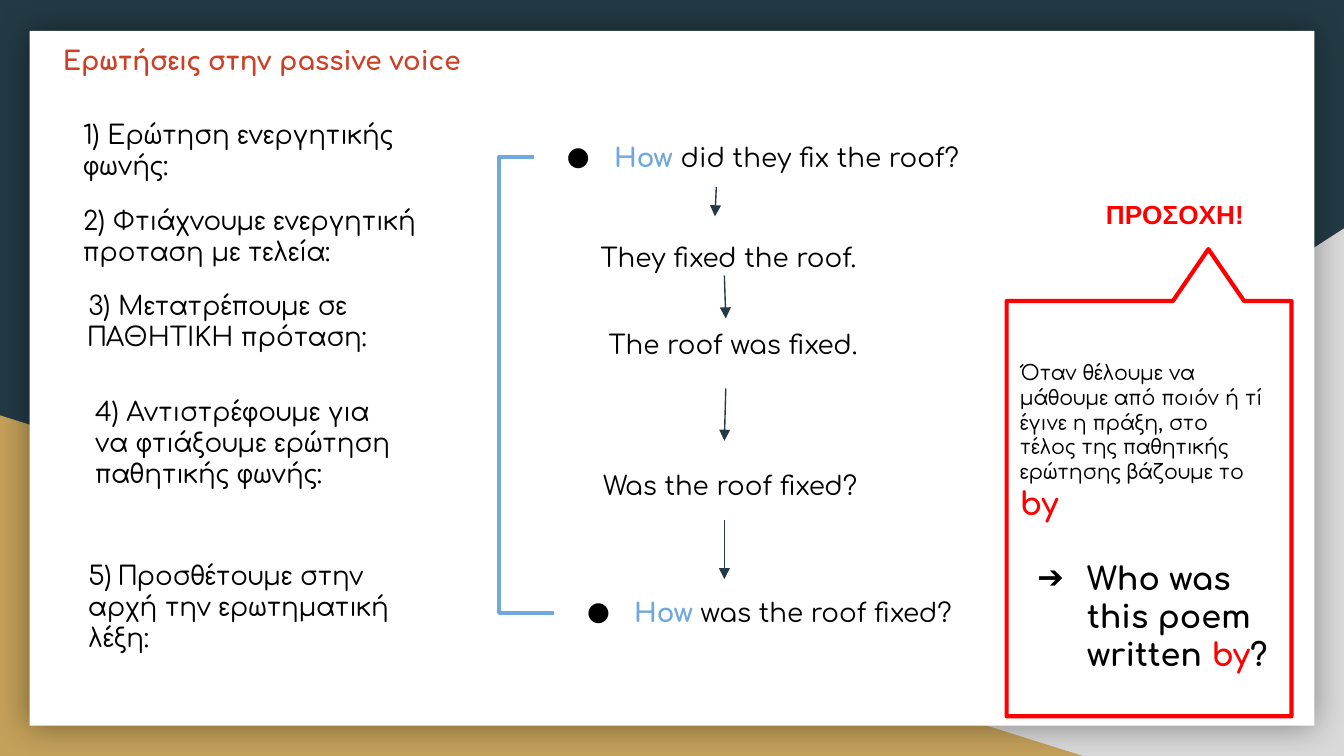
from lxml import etree
from pptx import Presentation
from pptx.dml.color import RGBColor
from pptx.enum.shapes import MSO_CONNECTOR, MSO_SHAPE
from pptx.enum.text import MSO_ANCHOR
from pptx.oxml.ns import qn
from pptx.util import Inches, Pt

STRAIGHT, ELBOW = MSO_CONNECTOR.STRAIGHT, MSO_CONNECTOR.ELBOW
RECTANGLE, TRIANGLE = MSO_SHAPE.RECTANGLE, MSO_SHAPE.RIGHT_TRIANGLE
CALLOUT = MSO_SHAPE.RECTANGULAR_CALLOUT

NAVY = RGBColor(0x23, 0x3A, 0x44)
GREY = RGBColor(0xD9, 0xD9, 0xD9)
GOLD = RGBColor(0xC4, 0xA1, 0x5A)
WHITE = RGBColor(0xFF, 0xFF, 0xFF)
BLACK = RGBColor(0, 0, 0)
RUST = RGBColor(0xCC, 0x41, 0x25)
BLUE = RGBColor(0x6F, 0xA8, 0xDC)
RED = RGBColor(0xFF, 0, 0)

# The slide is a grid of 100 columns by 56.25 rows of square cells
COLUMNS, ROWS = 100, 56.25
CELL = Inches(0.1)
LINE = 4.4  # height of a one-line text box, in rows
BODY = "Comfortaa"

# Column, row, width, height, wording
STEPS = [
    (5.2, 7.8, 25.7, 6.7, "1) Ερώτηση ενεργητικής φωνής:"),
    (5.2, 14.2, 31.2, 6.7, "2) Φτιάχνουμε ενεργητική προταση με τελεία:"),
    (5.6, 20.5, 27.4, 6.7, "3) Μετατρέπουμε σε ΠΑΘΗΤΙΚΗ πρόταση:"),
    (6.1, 28.4, 24.8, 11.4, "4) Αντιστρέφουμε για να φτιάξουμε ερώτηση παθητικής φωνής:"),
    (5.6, 40.6, 24.8, 9.1, "5) Προσθέτουμε στην αρχή την ερωτηματική λέξη:"),
]
# Column, row, width, wording
QUESTIONS = [
    (39.7, 9.5, 34.2, "did they fix the roof?"),
    (41.2, 43.4, 31.8, "was the roof fixed?"),
]
SENTENCES = [
    (43.7, 17, 28.9, "They fixed the roof."),
    (44.3, 23.4, 28.2, "The roof was fixed."),
    (43.9, 33.9, 27.4, "Was the roof fixed?"),
]
# Start column and row, end column and row
ARROWS = [
    (53.3, 13.9, 53.2, 16.1),
    (53.9, 20.5, 54, 23.7),
    (54, 28.9, 53.9, 32.8),
    (53.9, 38.7, 53.9, 43.1),
]


def cells(*counts):
    return [round(count * CELL) for count in counts]


def add_child(parent, tag, **attributes):
    child = etree.SubElement(parent, qn(tag))
    for name, value in attributes.items():
        child.set(name, str(value))
    return child


def add_block(slide, kind, box, fill):
    shape = slide.shapes.add_shape(kind, *cells(*box))
    shape.shadow.inherit = False
    shape.line.fill.background()
    shape.fill.solid()
    shape.fill.fore_color.rgb = fill
    return shape


def add_glow(shape, blur, alpha):
    effects = shape._element.spPr.find(qn("a:effectLst"))
    shadow = add_child(effects, "a:outerShdw", blurRad=Pt(blur), dist=0, algn="ctr", rotWithShape=0)
    color = add_child(shadow, "a:srgbClr", val="000000")
    add_child(color, "a:alpha", val=alpha * 1000)


def add_text_box(slide, *box):
    frame = slide.shapes.add_textbox(*cells(*box)).text_frame
    frame.word_wrap = True
    frame.vertical_anchor = MSO_ANCHOR.TOP
    frame.margin_left = frame.margin_right = CELL
    frame.margin_top = frame.margin_bottom = CELL
    return frame


def style(font, size=14, color=BLACK, bold=False, name=BODY):
    font.name, font.size, font.bold = name, Pt(size), bold
    font.color.rgb = color


def add_runs(paragraph, *runs):
    for text, size, color, bold in runs:
        run = paragraph.add_run()
        run.text = text
        style(run.font, size, color, bold)


def add_line_of_text(slide, box, text, **look):
    paragraph = add_text_box(slide, *box).paragraphs[0]
    paragraph.text = text
    style(paragraph.font, **look)


def set_bullet(paragraph, symbol, hanging):
    properties = paragraph._p.get_or_add_pPr()
    properties.set("marL", str(Inches(0.5)))
    properties.set("indent", str(-Inches(hanging)))
    color = add_child(properties, "a:buClr")
    add_child(color, "a:srgbClr", val=BLACK)
    add_child(properties, "a:buFont", typeface=BODY)
    add_child(properties, "a:buChar", char=symbol)


def add_connector(slide, kind, ends, color, width):
    connector = slide.shapes.add_connector(kind, *cells(*ends))
    connector.line.color.rgb = color
    connector.line.width = Pt(width)
    add_child(connector._element.spPr, "a:effectLst")
    return connector


def add_arrow(slide, ends):
    arrow = add_connector(slide, STRAIGHT, ends, NAVY, 0.75)
    add_child(arrow.line._get_or_add_ln(), "a:tailEnd", type="triangle")


def add_bracket(slide, ends, bend):
    bracket = add_connector(slide, ELBOW, ends, BLUE, 2.25)
    guides = bracket._element.spPr.find(qn("a:prstGeom")).get_or_add_avLst()
    add_child(guides, "a:gd", name="adj1", fmla=f"val {bend}")


def add_background(slide):
    slide.background.fill.solid()
    slide.background.fill.fore_color.rgb = NAVY
    corner = add_block(slide, TRIANGLE, (39.2, 17, 60.8, 39.25), GREY)
    corner._element.spPr.get_or_add_xfrm().set("flipH", "1")
    add_block(slide, TRIANGLE, (0, 30.9, 80.6, 25.35), GOLD)
    panel = add_block(slide, RECTANGLE, (2.2, 2.3, 95.6, 51.7), WHITE)
    add_glow(panel, blur=18, alpha=40)


def add_warning(slide):
    frame = add_text_box(slide, 74.9, 23.4, 20.6, 27.9)
    frame.margin_top = Inches(0.34)
    rule = frame.paragraphs[0]
    add_runs(
        rule,
        ("Όταν θέλουμε να μάθουμε από ποιόν ή τί έγινε η πράξη, "
         "στο τέλος της παθητικής ερώτησης βάζουμε το ", 11, BLACK, False),
        ("by", 17, RED, True),
    )
    example = frame.add_paragraph()
    example.space_before = Pt(20)
    set_bullet(example, "➔", 0.37)
    add_runs(
        example,
        ("Who was this poem written ", 17, BLACK, True),
        ("by", 17, RED, True),
        ("?", 17, BLACK, True),
    )

    # Upside-down callout, pointing at the heading
    callout = slide.shapes.add_shape(CALLOUT, *cells(74.9, 22.4, 21.2, 30.9))
    callout.shadow.inherit = False
    callout.rotation = 180
    callout.adjustments[0], callout.adjustments[1] = -0.208, 0.625
    callout.fill.background()
    callout.line.color.rgb = RED
    callout.line.width = Pt(2.25)
    add_line_of_text(slide, (81.3, 13.8, 14.2, LINE), "ΠΡΟΣΟΧΗ!",
                     color=RED, bold=True, name="Arial")


def main():
    presentation = Presentation()
    presentation.slide_width, presentation.slide_height = cells(COLUMNS, ROWS)
    slide = presentation.slides.add_slide(presentation.slide_layouts[6])
    add_background(slide)

    # Title and steps
    add_line_of_text(slide, (3.7, 2.3, 92.7, LINE), "Ερωτήσεις στην passive voice",
                     color=RUST, bold=True)
    for *box, text in STEPS:
        add_line_of_text(slide, box, text)

    # Worked example
    for column, row, width, text in QUESTIONS:
        paragraph = add_text_box(slide, column, row, width, LINE).paragraphs[0]
        set_bullet(paragraph, "●", 0.35)
        add_runs(paragraph, ("How ", 14, BLUE, True), (text, 14, BLACK, False))
    for column, row, width, text in SENTENCES:
        add_line_of_text(slide, (column, row, width, LINE), text)
    for ends in ARROWS:
        add_arrow(slide, ends)
    add_bracket(slide, (39.7, 11.7, 41.2, 45.6), -171100)

    add_warning(slide)
    presentation.save("out.pptx")


if __name__ == "__main__":
    main()
